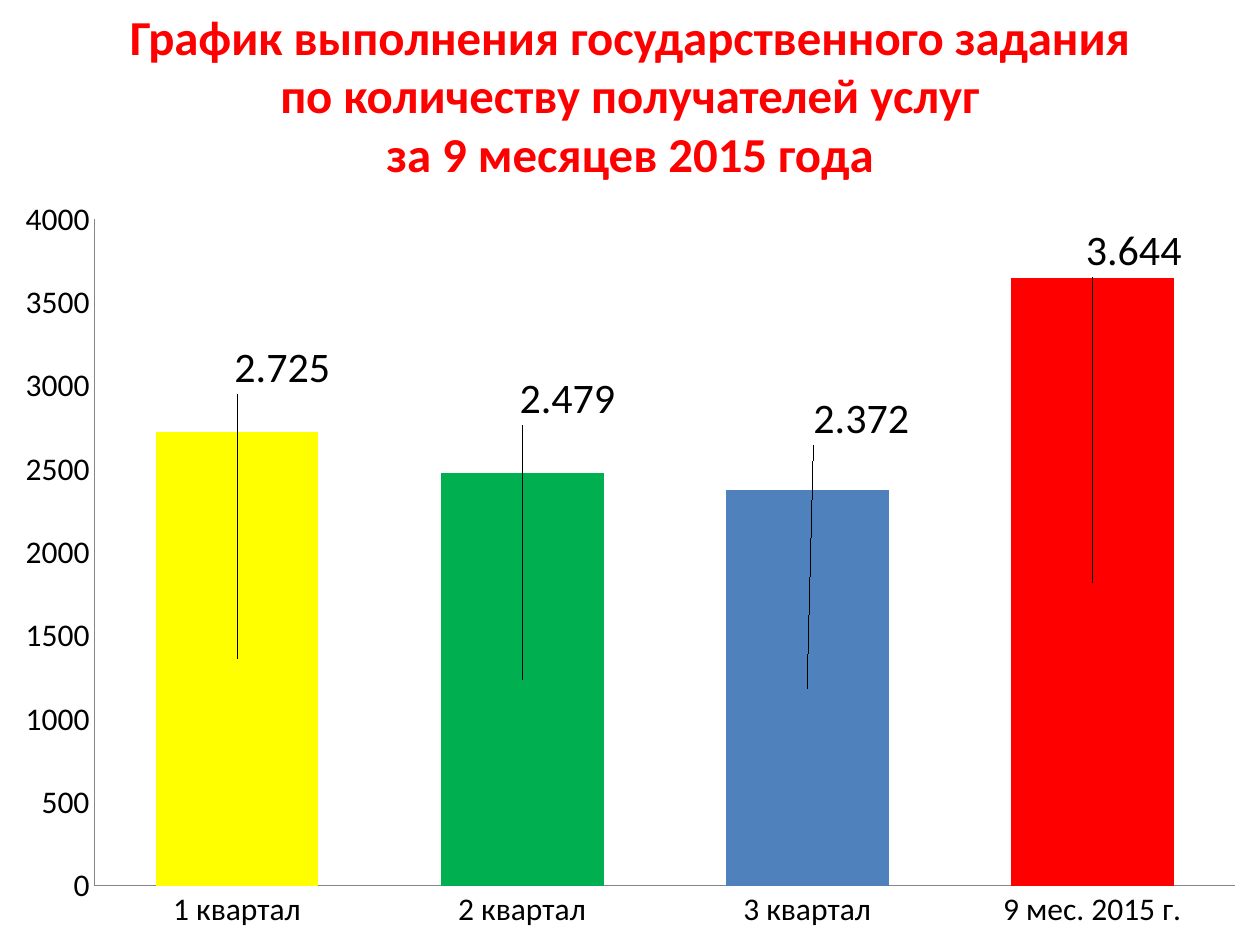
import dataclasses

import lxml.etree
import pptx
import pptx.chart.data
import pptx.dml.color
import pptx.enum.chart
import pptx.enum.text
import pptx.oxml.ns
import pptx.util
from pptx.util import Inches


@dataclasses.dataclass(frozen=True)
class Theme:
    font: str = "Calibri"
    title: str = "FF0000"
    text: str = "000000"
    axis: str = "868686"
    title_size: float = 27.9
    axis_size: float = 18
    label_size: float = 24


theme = Theme()


def style(font, size, color, bold=False):
    font.name = theme.font
    font.size = pptx.util.Pt(size)
    font.bold = bold
    font.color.rgb = pptx.dml.color.RGBColor.from_string(color)


def place(parent, position, **settings):
    """Insert a manual chart layout, given as fractions of the chart."""
    layout = lxml.etree.Element(pptx.oxml.ns.qn("c:layout"))
    manual = lxml.etree.SubElement(layout, pptx.oxml.ns.qn("c:manualLayout"))
    for name, value in settings.items():
        item = lxml.etree.SubElement(manual, pptx.oxml.ns.qn(f"c:{name}"))
        item.set("val", value if isinstance(value, str) else f"{value:.4f}")
    parent.insert(position, layout)


deck = pptx.Presentation()
deck.slide_width, deck.slide_height = Inches(10), Inches(7.5)
page = deck.slides.add_slide(deck.slide_layouts[6])

# Title
box = page.shapes.add_textbox(Inches(0), Inches(0), Inches(10), Inches(1.5))
frame = box.text_frame
frame.word_wrap = True
frame.vertical_anchor = pptx.enum.text.MSO_ANCHOR.MIDDLE
title_lines = [
    "График выполнения государственного задания",
    "по количеству получателей услуг",
    "за 9 месяцев 2015 года",
]
para = frame.paragraphs[0]
para.alignment = pptx.enum.text.PP_ALIGN.CENTER
for number, line in enumerate(title_lines):
    if number:
        para.add_line_break()
    span = para.add_run()
    span.text = line
    style(span.font, theme.title_size, theme.title, bold=True)

# Chart: category, value, label, colour, label shift right and lift above the bar in inches
quarters = [
    ("1 квартал", 2725, "2.725", "FFFF00", 0.36, 0.50),
    ("2 квартал", 2479, "2.479", "00B050", 0.36, 0.58),
    ("3 квартал", 2372, "2.372", "4F81BD", 0.43, 0.56),
    ("9 мес. 2015 г.", 3644, "3.644", "FF0000", 0.33, 0.21),
]
chart_width, chart_height = 10, 6.03
plot_left, plot_top, plot_width, plot_height = 0.75, 0.27, 9.05, 5.29
axis_maximum = 4000

data = pptx.chart.data.CategoryChartData()
data.categories = [quarter[0] for quarter in quarters]
data.add_series("Series 1", [quarter[1] for quarter in quarters])
chart = page.shapes.add_chart(
    pptx.enum.chart.XL_CHART_TYPE.COLUMN_STACKED,
    Inches(0), Inches(1.47), Inches(chart_width), Inches(chart_height), data,
).chart
chart.has_title = False
chart.has_legend = False
style(chart.font, theme.axis_size, theme.text)

# Plot area
plot_area = chart.plots[0]._element.getparent()
for old_layout in plot_area.findall(pptx.oxml.ns.qn("c:layout")):
    plot_area.remove(old_layout)
place(
    plot_area, 0, layoutTarget="inner", xMode="edge", yMode="edge",
    x=plot_left / chart_width, y=plot_top / chart_height,
    w=plot_width / chart_width, h=plot_height / chart_height,
)

# Axes
for axis in (chart.category_axis, chart.value_axis):
    axis.has_major_gridlines = False
    axis.major_tick_mark = pptx.enum.chart.XL_TICK_MARK.NONE
    axis.minor_tick_mark = pptx.enum.chart.XL_TICK_MARK.NONE
    axis.format.line.color.rgb = pptx.dml.color.RGBColor.from_string(theme.axis)
    axis.format.line.width = pptx.util.Pt(0.75)
    style(axis.tick_labels.font, theme.axis_size, theme.text)
chart.value_axis.minimum_scale = 0
chart.value_axis.maximum_scale = axis_maximum
chart.value_axis.major_unit = 500

# Bars and their labels
plot = chart.plots[0]
plot.gap_width = 75
plot.overlap = 100
plot.vary_by_categories = False
series = plot.series[0]
series.format.fill.solid()
series.format.fill.fore_color.rgb = pptx.dml.color.RGBColor.from_string("FF0000")
for index, (_, value, caption, color, shift, lift) in enumerate(quarters):
    point = series.points[index]
    point.format.fill.solid()
    point.format.fill.fore_color.rgb = pptx.dml.color.RGBColor.from_string(color)
    span = point.data_label.text_frame.paragraphs[0].add_run()
    span.text = caption
    style(span.font, theme.label_size, theme.text)
    # Labels start at the middle of the bar
    rise = value / axis_maximum * plot_height / 2 + lift
    label = series.data_labels._element.findall(pptx.oxml.ns.qn("c:dLbl"))[index]
    place(label, 1, x=shift / chart_width, y=-rise / chart_height)
series.data_labels.show_value = True

deck.save("out.pptx")
